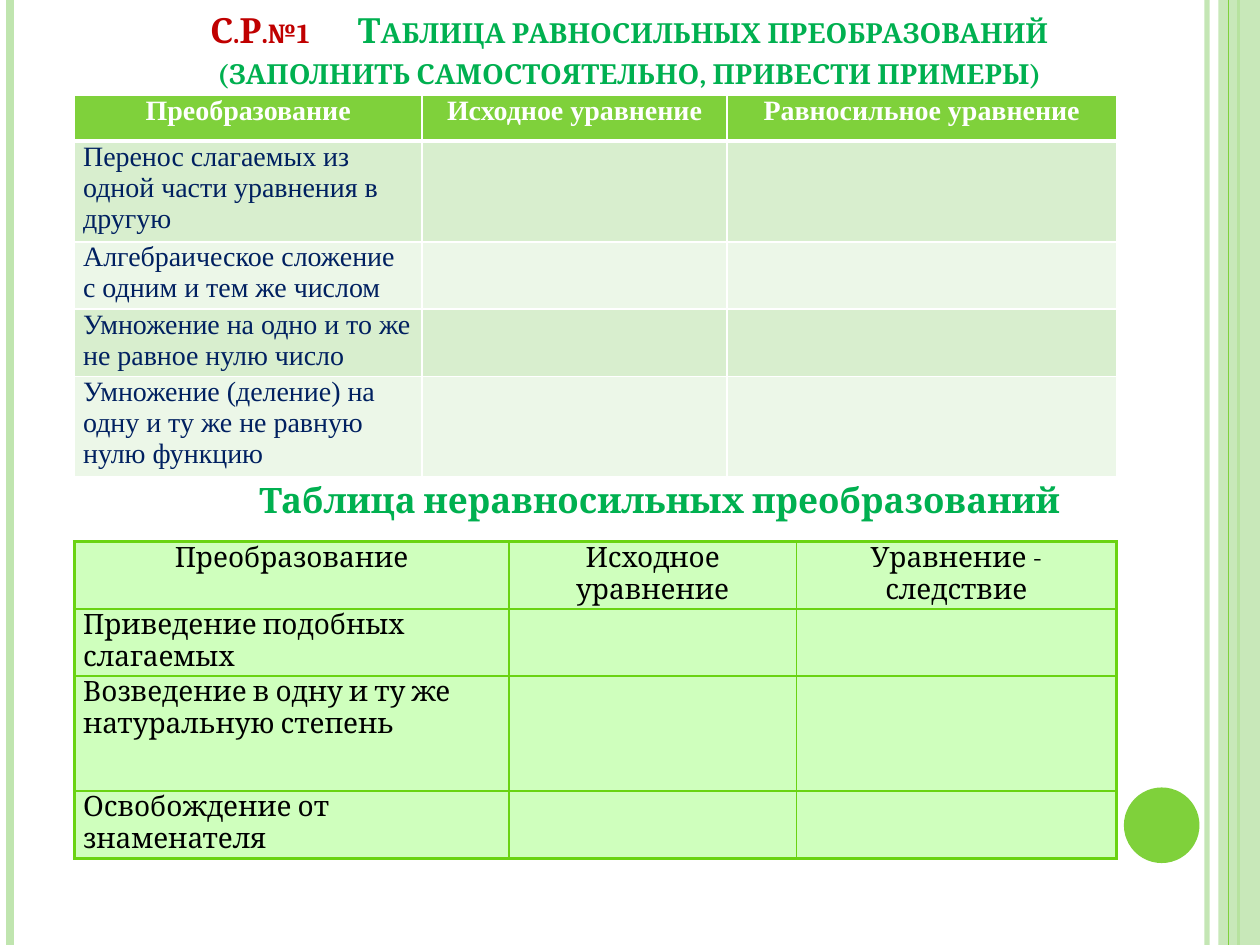
from lxml import etree
from pptx import Presentation
from pptx.dml.color import RGBColor
from pptx.enum.shapes import MSO_CONNECTOR, MSO_SHAPE
from pptx.enum.text import MSO_ANCHOR, PP_ALIGN
from pptx.oxml.ns import qn
from pptx.util import Inches, Pt

STRAIGHT = MSO_CONNECTOR.STRAIGHT
RECT, OVAL = MSO_SHAPE.RECTANGLE, MSO_SHAPE.OVAL
TOP, BOTTOM = MSO_ANCHOR.TOP, MSO_ANCHOR.BOTTOM
LEFT, CENTER = PP_ALIGN.LEFT, PP_ALIGN.CENTER

COLORS = {
    "white": "FFFFFF", "black": "000000", "red": "C00000", "navy": "002060",
    "heading": "00B050", "green": "7FD13B", "pale": "C0E5AF",
    "band_dark": "D8EECE", "band_light": "ECF7E8",
    "mint": "CFFFBD", "grid": "6AD312",
}
SERIF, TIMES = "Cambria", "Times New Roman"

EQUIVALENT = [
    ["Преобразование", "Исходное уравнение", "Равносильное уравнение"],
    ["Перенос слагаемых из одной части уравнения в другую", "", ""],
    ["Алгебраическое сложение с одним и тем же числом", "", ""],
    ["Умножение на одно и то же не равное нулю число", "", ""],
    ["Умножение (деление) на одну и ту же не равную нулю функцию", "", ""],
]
NON_EQUIVALENT = [
    ["Преобразование", "Исходное уравнение", "Уравнение - следствие"],
    ["Приведение подобных слагаемых", "", ""],
    ["Возведение в одну и ту же натуральную степень", "", ""],
    ["Освобождение от знаменателя", "", ""],
]


def rgb(name):
    """Return the named palette colour."""
    return RGBColor.from_string(COLORS[name])


def add_run(p, text, size=16, font=SERIF, color="black", bold=False, **attrs):
    """Append a formatted run; extra keywords become run attributes."""
    r = p.add_run()
    r.text = text
    r.font.size, r.font.name, r.font.bold = Pt(size), font, bold
    r.font.color.rgb = rgb(color)
    for key, value in attrs.items():
        r.font._element.set(key, value)


def set_alpha(element, percent):
    """Make the solid colour inside an element partly transparent."""
    color = next(element.iter(qn("a:srgbClr")))
    etree.SubElement(color, qn("a:alpha")).set("val", str(percent * 1000))


def set_border(cell, side, color, width):
    """Draw one border (L, R, T or B) of a table cell."""
    ln = etree.Element(qn(f"a:ln{side}"), w=str(Pt(width)))
    fill = etree.SubElement(ln, qn("a:solidFill"))
    etree.SubElement(fill, qn("a:srgbClr")).set("val", COLORS[color])
    tcPr = cell._tc.get_or_add_tcPr()
    tcPr.insert(len(tcPr.findall("*")) - 1, ln)


class SlideBuilder:
    """Holds the current slide and adds styled elements to it."""

    def __init__(self, slide):
        self.s = slide

    def line(self, x, color, width, alpha=None):
        """Add a full-height vertical line."""
        sp = self.s.shapes.add_connector(
            STRAIGHT, Inches(x), Inches(0), Inches(x), Inches(7.5))
        sp.line.color.rgb, sp.line.width = rgb(color), Pt(width)
        if alpha:
            set_alpha(sp.line._ln, alpha)
        etree.SubElement(sp._element.spPr, qn("a:effectLst"))

    def shape(self, kind, box, color, alpha=None):
        """Add a filled shape without an outline."""
        sp = self.s.shapes.add_shape(kind, *map(Inches, box))
        sp.shadow.inherit = False
        sp.fill.solid()
        sp.fill.fore_color.rgb = rgb(color)
        sp.line.fill.background()
        if alpha:
            set_alpha(sp._element.spPr, alpha)

    def text(self, box, runs, anchor=TOP, side=0.1, bottom=0.05):
        """Add a centred text box made of (text, format) runs."""
        tf = self.s.shapes.add_textbox(*map(Inches, box)).text_frame
        tf.word_wrap, tf.vertical_anchor = True, anchor
        tf.margin_left = tf.margin_right = Inches(side)
        tf.margin_bottom = Inches(bottom)
        p = tf.paragraphs[0]
        p.alignment = CENTER
        for text, style in runs:
            add_run(p, text, **style)

    def table(self, origin, widths, heights, rows, look):
        """Add a table; look(row, col) gives fill, text format and borders."""
        size = sum(widths), sum(heights)
        table = self.s.shapes.add_table(
            len(rows), len(widths), *map(Inches, origin + size)).table
        for col, width in zip(table.columns, widths):
            col.width = Inches(width)
        for i, (row, height) in enumerate(zip(rows, heights)):
            table.rows[i].height = Inches(height)
            for j, text in enumerate(row):
                cell = table.cell(i, j)
                fill, style, borders = look(i, j)
                cell.margin_left = cell.margin_right = Inches(0.07)
                cell.margin_top = cell.margin_bottom = 0
                cell.fill.solid()
                cell.fill.fore_color.rgb = rgb(fill)
                for side, (color, width) in borders.items():
                    set_border(cell, side, color, width)
                if text:
                    p = cell.text_frame.paragraphs[0]
                    p.alignment = LEFT if i else CENTER
                    add_run(p, text, **style)


def banded_look(i, j):
    """Style a cell of the equivalent transformations table."""
    borders = {side: ("white", 1) for side in "LRTB"}
    if i == 0:
        borders["B"] = ("white", 3)
        return "green", dict(font=TIMES, color="white", bold=True), borders
    if i == 1:
        borders["T"] = ("white", 3)
    fill = "band_dark" if i % 2 else "band_light"
    return fill, dict(font=TIMES, color="navy"), borders


def grid_look(i, j):
    """Style a cell of the non-equivalent transformations table."""
    outer = {"L": j == 0, "R": j == 2, "T": i == 0, "B": i == 3}
    borders = {side: ("grid", 2 if edge else 1) for side, edge in outer.items()}
    return "mint", {}, borders


def main():
    """Build and save the slide."""
    prs = Presentation()
    prs.slide_width, prs.slide_height = Inches(10), Inches(7.5)
    b = SlideBuilder(prs.slides.add_slide(prs.slide_layouts[6]))

    b.line(9.58, "pale", 3, alpha=93)
    b.line(0.08, "pale", 4.5)
    b.line(9.83, "green", 1.5)
    b.shape(RECT, (9.67, 0, 0.33, 7.5), "pale", alpha=87)
    b.line(9.75, "green", 0.75)
    b.shape(OVAL, (8.92, 6.25, 0.6, 0.6), "green")

    title = dict(size=19.8, bold=True, cap="small")
    b.text((0.91, 0.52, 8.17, 0.63), [
        ("С.Р.№1", dict(title, color="red")),
        (" ", dict(title, color="red", spc="1200")),
        ("Таблица равносильных преобразований "
         "(заполнить самостоятельно, привести примеры)",
         dict(title, color="heading")),
    ], anchor=BOTTOM, side=0.4, bottom=0.42)

    b.table((0.59, 0.76), (2.76, 2.42, 3.09), (0.36, 0.74, 0.52, 0.52, 0.77),
            EQUIVALENT, banded_look)
    b.table((0.59, 4.3), (3.45, 2.28, 2.54), (0.51, 0.51, 0.91, 0.51),
            NON_EQUIVALENT, grid_look)
    b.text((1.77, 3.75, 6.93, 0.44), [
        ("Таблица неравносильных преобразований",
         dict(size=20, color="heading", bold=True)),
    ])
    prs.save("out.pptx")


if __name__ == "__main__":
    main()
